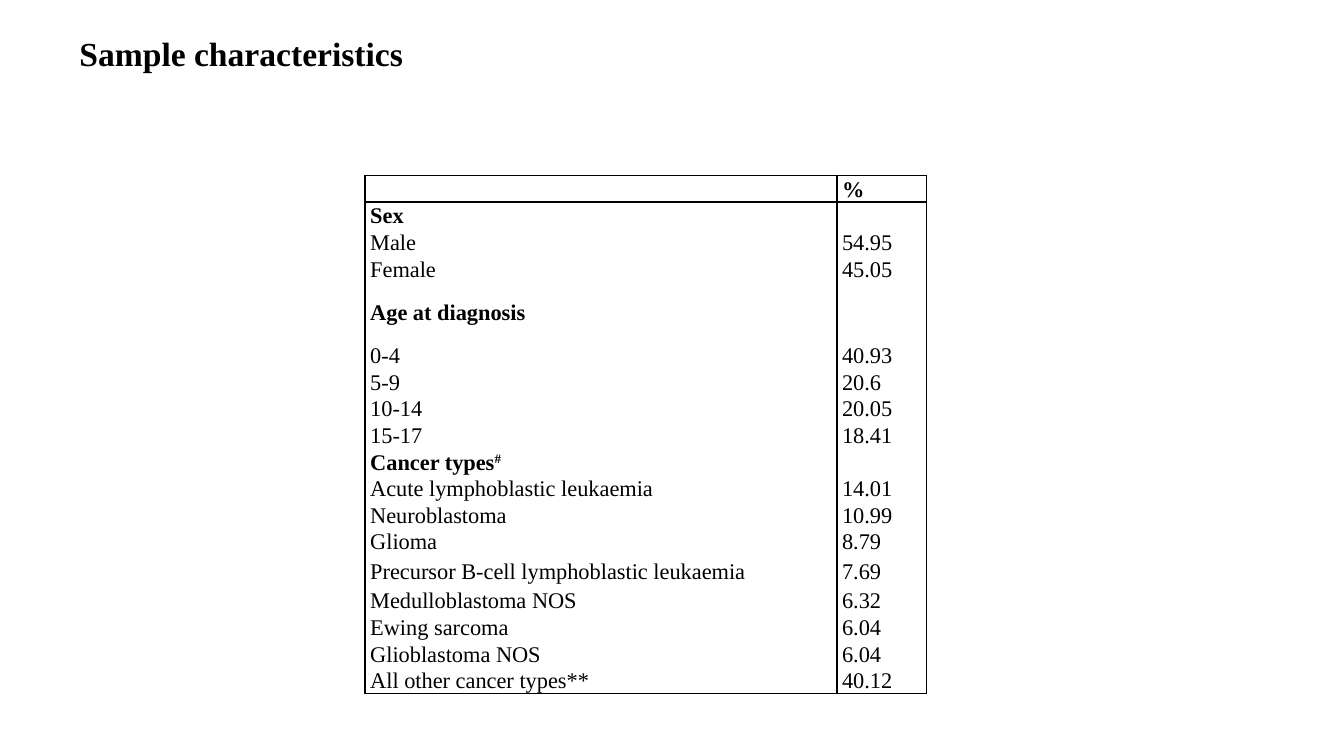
from dataclasses import dataclass

from lxml import etree
from pptx import Presentation
from pptx.dml.color import RGBColor
from pptx.enum import text
from pptx.oxml.ns import qn
from pptx.util import Cm, Pt

INK = {"text": "000000", "line": "000000", "back": "FFFFFF"}
FACE = "Times New Roman"
THIN, THICK = Pt(1), Pt(1.5)


@dataclass
class Row:
    label: str
    value: str = ""
    bold: bool = False
    mark: str = ""
    high: float = 0.67


ROWS = [
    Row("", "%", bold=True),
    Row("Sex", bold=True),
    Row("Male", "54.95"),
    Row("Female", "45.05"),
    Row("Age at diagnosis", bold=True, high=1.51),
    Row("0-4", "40.93"),
    Row("5-9", "20.6"),
    Row("10-14", "20.05"),
    Row("15-17", "18.41"),
    Row("Cancer types", bold=True, mark="#"),
    Row("Acute lymphoblastic leukaemia", "14.01"),
    Row("Neuroblastoma", "10.99"),
    Row("Glioma", "8.79"),
    Row("Precursor B-cell lymphoblastic leukaemia", "7.69", high=0.81),
    Row("Medulloblastoma NOS", "6.32"),
    Row("Ewing sarcoma", "6.04"),
    Row("Glioblastoma NOS", "6.04"),
    Row("All other cancer types**", "40.12"),
]


def style(par, size: int, bold: bool) -> None:
    font = par.font
    font.name, font.size, font.bold = FACE, Pt(size), bold
    font.color.rgb = RGBColor.from_string(INK["text"])


def border(cell, sides: dict[str, int]) -> None:
    props = cell._tc.get_or_add_tcPr()
    for side in "LRTB":
        width = sides.get(side, 0)
        line = etree.SubElement(props, qn(f"a:ln{side}"), w=str(width))
        if width:
            fill = etree.SubElement(line, qn("a:solidFill"))
            etree.SubElement(fill, qn("a:srgbClr"), val=INK["line"])
        else:
            etree.SubElement(line, qn("a:noFill"))


def write(cell, words: str, bold: bool, mark: str = "") -> None:
    cell.margin_left = cell.margin_right = Cm(0.13)
    cell.margin_top = cell.margin_bottom = 0
    cell.vertical_anchor = text.MSO_ANCHOR.MIDDLE
    par = cell.text_frame.paragraphs[0]
    par.line_spacing, par.space_after = 1.07, Pt(8)
    style(par, 16, bold)
    if words:
        par.add_run().text = words
    else:
        etree.SubElement(par._p, qn("a:endParaRPr"), sz="1600")
    if mark:
        run = par.add_run()
        run.text = mark
        run._r.get_or_add_rPr().set("baseline", "30000")


def draw(slide, rows: list[Row]) -> None:
    high = sum(row.high for row in rows)
    frame = slide.shapes.add_table(len(rows), 2, Cm(9.2), Cm(4.42), Cm(14.15), Cm(high))
    table = frame.table
    table.first_row = table.horz_banding = False
    for col, wide in zip(table.columns, (11.89, 2.26)):
        col.width = Cm(wide)
    for i, row in enumerate(rows):
        table.rows[i].height = Cm(row.high)
        # Rules frame the header and the body
        edges = {}
        if i < 2:
            edges["T"] = THICK if i else THIN
        if i == 0:
            edges["B"] = THICK
        elif i == len(rows) - 1:
            edges["B"] = THIN
        left, right = table.cell(i, 0), table.cell(i, 1)
        write(left, row.label, row.bold, row.mark)
        write(right, row.value, row.bold)
        right.text_frame.paragraphs[0].alignment = text.PP_ALIGN.JUSTIFY
        border(left, edges | {"L": THIN, "R": THICK})
        border(right, edges | {"L": THICK, "R": THIN})
        for cell in (left, right):
            cell.fill.solid()
            cell.fill.fore_color.rgb = RGBColor.from_string(INK["back"])


def main() -> None:
    deck = Presentation()
    deck.slide_width, deck.slide_height = Cm(33.87), Cm(19.05)
    slide = deck.slides.add_slide(deck.slide_layouts[5])

    # Title
    title = slide.shapes.title
    title.left, title.top, title.width, title.height = Cm(2), Cm(0.76), Cm(23.5), Cm(1.8)
    frame = title.text_frame
    frame.text = "Sample characteristics"
    frame.margin_left = frame.margin_right = frame.margin_bottom = 0
    frame.margin_top = Cm(0.08)
    frame.vertical_anchor = text.MSO_ANCHOR.TOP
    par = frame.paragraphs[0]
    par.alignment = text.PP_ALIGN.LEFT
    style(par, 24, True)

    # Table of shares
    draw(slide, ROWS)
    deck.save("out.pptx")


if __name__ == "__main__":
    main()
